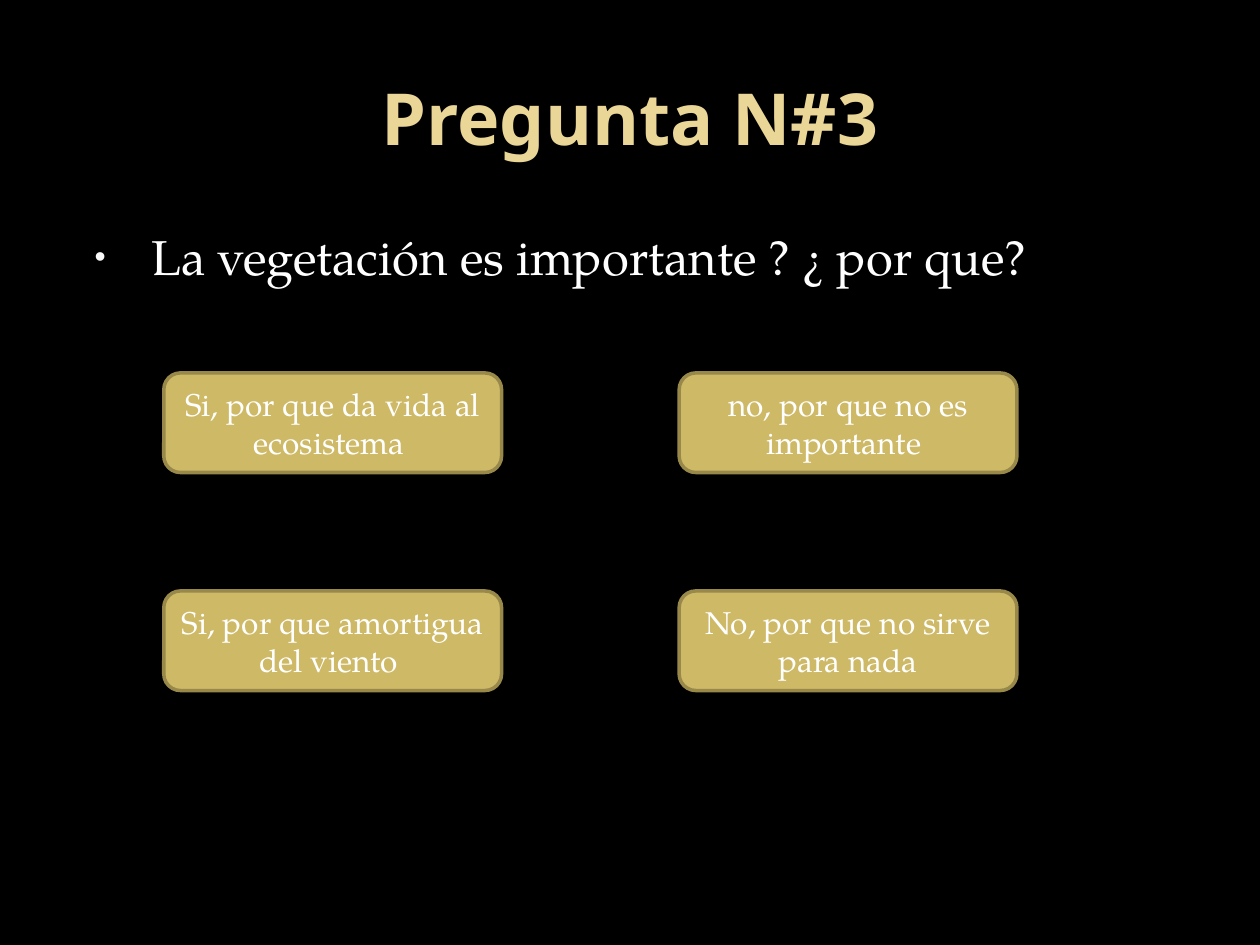
from lxml import etree
from pptx import Presentation
from pptx.dml.color import RGBColor
from pptx.enum import shapes, text
from pptx.oxml import ns
from pptx.util import Pt

TITLE = "Pregunta N#3"
QUESTION = "La vegetación es importante ? ¿ por que?"
# (column, row, answer), from back to front
ANSWERS = [
    (0, 0, "Si, por que da vida al ecosistema "),
    (1, 1, "No, por que no sirve para nada"),
    (0, 1, "Si, por que amortigua del viento "),
    (1, 0, "no, por que no es importante "),
]

BLACK = RGBColor(0x00, 0x00, 0x00)
WHITE = RGBColor(0xFF, 0xFF, 0xFF)
BULLET = RGBColor(0xF9, 0xF9, 0xF9)
PALE_GOLD = RGBColor(0xEA, 0xD6, 0x96)
GOLD = RGBColor(0xCE, 0xB9, 0x66)
DARK_GOLD = RGBColor(0x98, 0x89, 0x4B)
HEADING_FONT = "Noto Sans"
BODY_FONT = "TeX Gyre Pagella"

GRID_LEFT, GRID_TOP = 93.6, 213.1
STEP_X, STEP_Y = 294.5, 124.6
ANSWER_WIDTH, ANSWER_HEIGHT = 193, 56.9


def place(shape, left, top, width, height):
    shape.left, shape.top = Pt(left), Pt(top)
    shape.width, shape.height = Pt(width), Pt(height)


def write(frame, words, font, size, color, align, bold=False):
    frame.word_wrap = True
    frame.auto_size = text.MSO_AUTO_SIZE.NONE
    paragraph = frame.paragraphs[0]
    paragraph.alignment = align
    run = paragraph.add_run()
    run.text = words
    run.font.name = font
    run.font.size = Pt(size)
    run.font.bold = bold
    run.font.color.rgb = color
    return paragraph


def add_bullet(paragraph, color, percent, margin, indent):
    props = paragraph._p.get_or_add_pPr()
    props.set("marL", str(Pt(margin)))
    props.set("indent", str(Pt(indent)))
    bullet_color = etree.SubElement(props, ns.qn("a:buClr"))
    etree.SubElement(bullet_color, ns.qn("a:srgbClr"), val=str(color))
    etree.SubElement(props, ns.qn("a:buSzPct"), val=str(percent * 1000))
    etree.SubElement(props, ns.qn("a:buChar"), char="•")


def add_answer(slide, column, row, words):
    box = slide.shapes.add_shape(
        shapes.MSO_SHAPE.ROUNDED_RECTANGLE,
        Pt(GRID_LEFT + column * STEP_X), Pt(GRID_TOP + row * STEP_Y),
        Pt(ANSWER_WIDTH), Pt(ANSWER_HEIGHT))
    box.shadow.inherit = False
    box.fill.solid()
    box.fill.fore_color.rgb = GOLD
    box.line.color.rgb = DARK_GOLD
    box.line.width = Pt(2)
    box.text_frame.vertical_anchor = text.MSO_ANCHOR.MIDDLE
    write(box.text_frame, words, BODY_FONT, 18, WHITE, text.PP_ALIGN.CENTER)


def main():
    deck = Presentation()
    deck.slide_width, deck.slide_height = Pt(720), Pt(540)
    slide = deck.slides.add_slide(deck.slide_layouts[1])
    slide.background.fill.solid()
    slide.background.fill.fore_color.rgb = BLACK

    title, question = slide.placeholders
    place(title, 36, 21.6, 648, 90)
    title.text_frame.vertical_anchor = text.MSO_ANCHOR.MIDDLE
    write(title.text_frame, TITLE, HEADING_FONT, 41, PALE_GOLD,
          text.PP_ALIGN.CENTER, bold=True)

    place(question, 36, 126, 648, 370.8)
    paragraph = write(question.text_frame, QUESTION, BODY_FONT, 28, WHITE,
                      text.PP_ALIGN.LEFT)
    add_bullet(paragraph, BULLET, percent=65, margin=43.2, indent=-32.4)

    for column, row, words in ANSWERS:
        add_answer(slide, column, row, words)

    deck.save("out.pptx")


if __name__ == "__main__":
    main()
